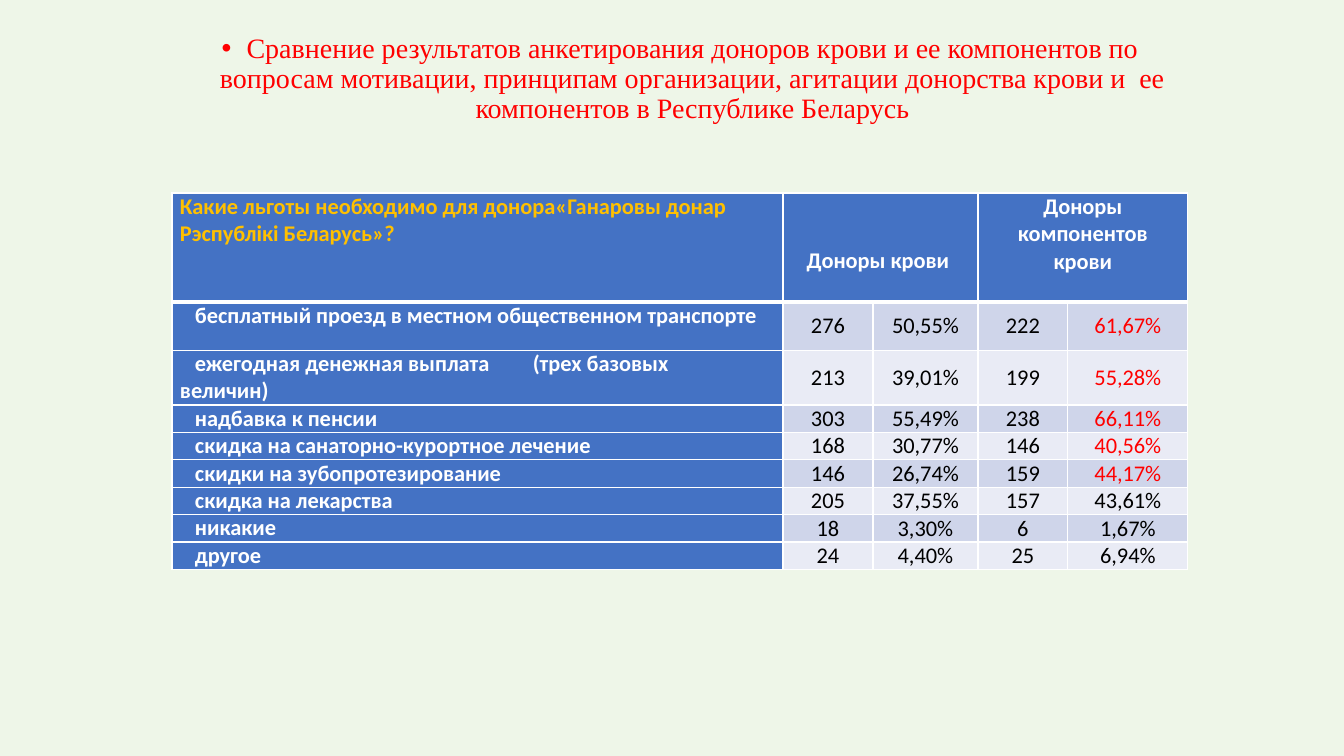
from lxml.etree import SubElement
from pptx import Presentation
from pptx.dml.color import RGBColor
from pptx.enum.text import MSO_ANCHOR as Anchor, MSO_AUTO_SIZE as AutoSize, PP_ALIGN as Align
from pptx.oxml.ns import qn
from pptx.util import Pt

TITLE = ("Сравнение результатов анкетирования доноров крови и ее компонентов по вопросам "
         "мотивации, принципам организации, агитации донорства крови и  ее компонентов "
         "в Республике Беларусь")
QUESTION = "Какие льготы необходимо для донора«Ганаровы донар Рэспублiкi Беларусь»?"
BLOOD_DONORS = "Доноры крови"
COMPONENT_DONORS = "Доноры компонентов крови"
BENEFITS = [
    ("бесплатный проезд в местном общественном транспорте", "276", "50,55%", "222", "61,67%"),
    ("ежегодная денежная выплата\t(трех базовых \nвеличин)", "213", "39,01%", "199", "55,28%"),
    ("надбавка к пенсии", "303", "55,49%", "238", "66,11%"),
    ("скидка на санаторно-курортное лечение", "168", "30,77%", "146", "40,56%"),
    ("скидки на зубопротезирование", "146", "26,74%", "159", "44,17%"),
    ("скидка на лекарства", "205", "37,55%", "157", "43,61%"),
    ("никакие", "18", "3,30%", "6", "1,67%"),
    ("другое", "24", "4,40%", "25", "6,94%"),
]
HIGHLIGHTED_ROWS = 5

PAGE_SIZE = (1344, 756)
TITLE_BOX = (180, 29, 1000, 611)
TABLE_BOX = (172, 193, 1016, 370)
COLUMN_WIDTHS = (611, 90, 105, 90, 120)
ROW_HEIGHTS = (48,) * 3 + (24,) * 6
BULLET_INDENT = 25
LABEL_INDENT = 15
LABEL_TAB = 385
CELL_MARGIN = 8
HEADING_MARGIN = 13
TEXT_LINE = 27

PALE_GREEN = RGBColor(0xEE, 0xF6, 0xE8)
RED = RGBColor(0xFF, 0x00, 0x00)
GOLD = RGBColor(0xFF, 0xC0, 0x00)
WHITE = RGBColor(0xFF, 0xFF, 0xFF)
BLACK = RGBColor(0x00, 0x00, 0x00)
BLUE = RGBColor(0x44, 0x72, 0xC4)
BANDS = (RGBColor(0xCF, 0xD5, 0xEA), RGBColor(0xE9, 0xEB, 0xF5))


def px(length):
    return round(length * 914400 / 100.8)


def write(frame, text, size=16, font="Calibri", color=BLACK, bold=False, align=Align.LEFT):
    para = frame.paragraphs[0]
    para.alignment = align
    for number, line in enumerate(text.split("\n")):
        if number:
            para.add_line_break()
        span = para.add_run()
        span.text = line
        span.font.size = Pt(size)
        span.font.name = font
        span.font.color.rgb = color
        span.font.bold = bold
    return para


def add_borders(cell, top, bottom):
    props = cell._tc.get_or_add_tcPr()
    for side, width in (("L", 1), ("R", 1), ("T", top), ("B", bottom)):
        line = SubElement(props, qn(f"a:ln{side}"), w=str(Pt(width)))
        fill = SubElement(line, qn("a:solidFill"))
        SubElement(fill, qn("a:srgbClr"), val=str(WHITE))


def add_title(page):
    title = page.shapes.title
    title.left, title.top, title.width, title.height = map(px, TITLE_BOX)
    frame = title.text_frame
    frame.word_wrap = True
    frame.auto_size = AutoSize.NONE
    frame.vertical_anchor = Anchor.TOP
    para = write(frame, TITLE, size=20, font="Times New Roman", color=RED, align=Align.CENTER)
    para.line_spacing = 0.9
    para.space_before = Pt(10)
    props = para._p.get_or_add_pPr()
    props.set("marL", str(px(BULLET_INDENT)))
    props.set("indent", str(-px(BULLET_INDENT)))
    SubElement(props, qn("a:buFont"), typeface="Arial")
    SubElement(props, qn("a:buChar"), char="•")


def add_label(cell, text):
    para = write(cell.text_frame, text, color=WHITE, bold=True)
    props = para._p.get_or_add_pPr()
    props.set("marL", "0")
    props.set("indent", str(px(LABEL_INDENT)))
    if "\t" in text:
        stops = SubElement(props, qn("a:tabLst"))
        SubElement(stops, qn("a:tab"), pos=str(px(LABEL_TAB)), algn="l")


def add_table(page):
    shape = page.shapes.add_table(len(ROW_HEIGHTS), len(COLUMN_WIDTHS), *map(px, TABLE_BOX))
    table = shape.table
    for column, width in zip(table.columns, COLUMN_WIDTHS):
        column.width = px(width)
    for row, height in zip(table.rows, ROW_HEIGHTS):
        row.height = px(height)
    shape.height = px(TABLE_BOX[3])

    for r in range(len(ROW_HEIGHTS)):
        for c in range(len(COLUMN_WIDTHS)):
            cell = table.cell(r, c)
            cell.margin_left = cell.margin_right = px(CELL_MARGIN)
            cell.margin_top = cell.margin_bottom = 0
            cell.vertical_anchor = Anchor.MIDDLE if c else Anchor.TOP
            add_borders(cell, top=3 if r == 1 else 1, bottom=3 if r == 0 else 1)
            cell.fill.solid()
            cell.fill.fore_color.rgb = BLUE if r == 0 or c == 0 else BANDS[(r - 1) % 2]

    write(table.cell(0, 0).text_frame, QUESTION, color=GOLD, bold=True)
    for c, heading in ((1, BLOOD_DONORS), (3, COMPONENT_DONORS)):
        cell = table.cell(0, c)
        cell.merge(table.cell(0, c + 1))
        cell.margin_right = px(HEADING_MARGIN)
        write(cell.text_frame, heading, color=WHITE, bold=True, align=Align.CENTER)
    table.cell(0, 1).margin_top = px(TEXT_LINE)
    table.cell(0, 3).margin_left = px(HEADING_MARGIN)
    table.cell(0, 3).margin_bottom = px(TEXT_LINE)

    for r, (label, *values) in enumerate(BENEFITS, 1):
        add_label(table.cell(r, 0), label)
        for c, value in enumerate(values, 1):
            color = RED if c == len(values) and r <= HIGHLIGHTED_ROWS else BLACK
            write(table.cell(r, c).text_frame, value, color=color, align=Align.CENTER)


def main():
    deck = Presentation()
    deck.slide_width, deck.slide_height = map(px, PAGE_SIZE)
    page = deck.slides.add_slide(deck.slide_layouts[5])
    page.background.fill.solid()
    page.background.fill.fore_color.rgb = PALE_GREEN
    add_title(page)
    add_table(page)
    deck.save("out.pptx")


if __name__ == "__main__":
    main()
